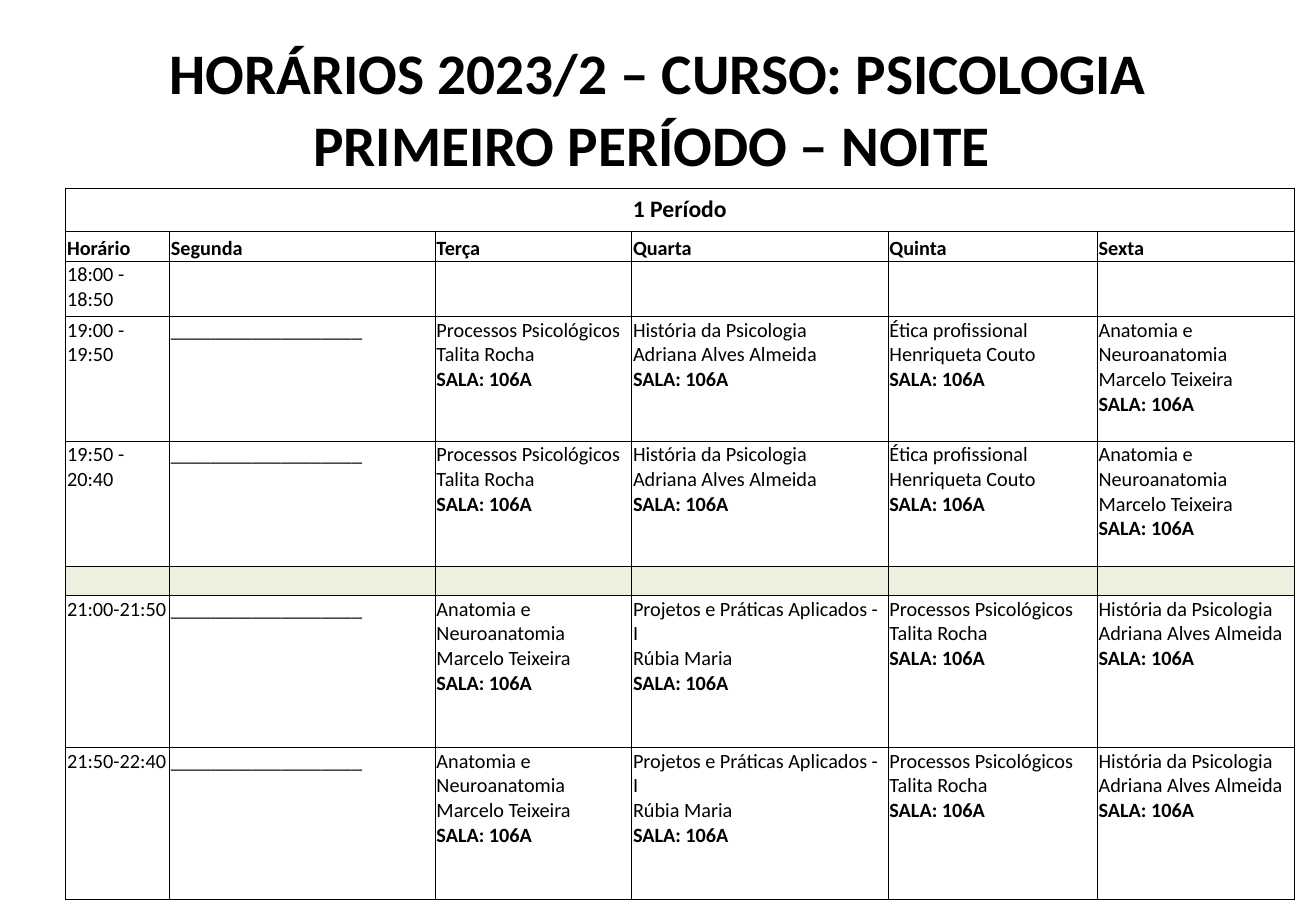
from lxml import etree
from pptx import Presentation
from pptx import util as u
from pptx.dml.color import RGBColor
from pptx.enum import text
from pptx.oxml.ns import qn

FONT = "Calibri"
BLACK = "000000"
BREAK_FILL = "EBF1DE"
ROOM = "SALA: 106A"

COL_WIDTHS = [61.5, 157.5, 116.5, 152, 124, 116.5]
ROW_HEIGHTS = [24.5, 17.5, 33, 74, 74, 17.5, 90, 90]

DAYS = ["Horário", "Segunda", "Terça", "Quarta", "Quinta", "Sexta"]
NO_CLASS = "_" * 19
PROCESSES = ("Processos Psicológicos", "Talita Rocha")
HISTORY = ("História da Psicologia", "Adriana Alves Almeida")
ETHICS = ("Ética profissional", "Henriqueta Couto")
ANATOMY = ("Anatomia e Neuroanatomia", "Marcelo Teixeira")
PROJECTS = ("Projetos e Práticas Aplicados - I", "Rúbia Maria")

EARLY = [PROCESSES, HISTORY, ETHICS, ANATOMY]
LATE = [ANATOMY, PROJECTS, PROCESSES, HISTORY]
# Table row -> time slot and the classes from Tuesday to Friday
CLASS_ROWS = {
    3: ("19:00 - 19:50", EARLY),
    4: ("19:50 - 20:40", EARLY),
    6: ("21:00-21:50", LATE),
    7: ("21:50-22:40", LATE),
}
BREAK_ROW = 5


def rgb(hex_color):
    return RGBColor.from_string(hex_color)


def add_run(p, words, size=12, bold=False):
    r = p.add_run()
    r.text = words
    r.font.name = FONT
    r.font.size = u.Pt(size)
    r.font.bold = bold
    r.font.color.rgb = rgb(BLACK)


def set_borders(cell, color=BLACK, width=0.5):
    tc_pr = cell._tc.get_or_add_tcPr()
    for side in ("a:lnL", "a:lnR", "a:lnT", "a:lnB"):
        ln = etree.SubElement(tc_pr, qn(side), w=str(u.Pt(width)))
        fill = etree.SubElement(ln, qn("a:solidFill"))
        etree.SubElement(fill, qn("a:srgbClr"), val=color)


def format_cell(cell, fill=None):
    """Set borders, fill, tight margins and the size an empty cell takes."""
    set_borders(cell)
    if fill:
        cell.fill.solid()
        cell.fill.fore_color.rgb = rgb(fill)
    else:
        cell.fill.background()
    cell.margin_left = cell.margin_right = cell.margin_top = u.Pt(0.75)
    cell.margin_bottom = 0
    p = cell.text_frame.paragraphs[0]
    p._p.get_or_add_endParaRPr().set("sz", "1200")


def write_cell(cell, words, size=12, bold=False):
    p = cell.text_frame.paragraphs[0]
    add_run(p, words, size, bold)
    return p


def write_class(cell, subject, teacher):
    p = write_cell(cell, subject)
    p.add_line_break()
    add_run(p, teacher)
    add_run(cell.text_frame.add_paragraph(), ROOM, bold=True)


def add_title(s, left, top, width, height):
    sp = s.shapes.title
    sp.left, sp.top, sp.width, sp.height = map(u.Pt, (left, top, width, height))
    tf = sp.text_frame
    tf.word_wrap = True
    tf.auto_size = text.MSO_AUTO_SIZE.NONE
    tf.vertical_anchor = text.MSO_ANCHOR.MIDDLE
    lines = ["HORÁRIOS 2023/2 – CURSO: PSICOLOGIA", "PRIMEIRO PERÍODO – NOITE "]
    for i, line in enumerate(lines):
        p = tf.add_paragraph() if i else tf.paragraphs[0]
        p.alignment = text.PP_ALIGN.CENTER
        p.line_spacing = 0.9
        p.space_before = u.Pt(0)
        p.space_after = u.Pt(6)
        add_run(p, line, 34, True)


def add_timetable(s, left, top):
    frame = s.shapes.add_table(
        len(ROW_HEIGHTS), len(COL_WIDTHS), u.Pt(left), u.Pt(top),
        u.Pt(sum(COL_WIDTHS)), u.Pt(sum(ROW_HEIGHTS)))
    table = frame.table
    table.first_row = table.horz_banding = False
    for col, width in zip(table.columns, COL_WIDTHS):
        col.width = u.Pt(width)
    for i, (row, height) in enumerate(zip(table.rows, ROW_HEIGHTS)):
        row.height = u.Pt(height)
        for cell in row.cells:
            format_cell(cell, BREAK_FILL if i == BREAK_ROW else None)

    heading = table.cell(0, 0)
    heading.merge(table.cell(0, len(COL_WIDTHS) - 1))
    heading.margin_left = heading.margin_right = u.Pt(8.64)
    heading.margin_top = heading.margin_bottom = u.Pt(4.32)
    write_cell(heading, "1 Período", 14, True).alignment = text.PP_ALIGN.CENTER

    for c, day in enumerate(DAYS):
        cell = table.cell(1, c)
        cell.vertical_anchor = text.MSO_ANCHOR.BOTTOM
        write_cell(cell, day, bold=True)
    write_cell(table.cell(2, 0), "18:00 - 18:50")
    for i, (slot, classes) in CLASS_ROWS.items():
        write_cell(table.cell(i, 0), slot)
        write_cell(table.cell(i, 1), NO_CLASS)
        for c, (subject, teacher) in enumerate(classes, 2):
            write_class(table.cell(i, c), subject, teacher)


def main():
    prs = Presentation()
    prs.slide_width, prs.slide_height = u.Pt(780), u.Pt(540)
    s = prs.slides.add_slide(prs.slide_layouts[5])
    add_title(s, 39, 21.5, 702, 90)
    add_timetable(s, 39, 111.5)
    prs.save("out.pptx")


if __name__ == "__main__":
    main()
